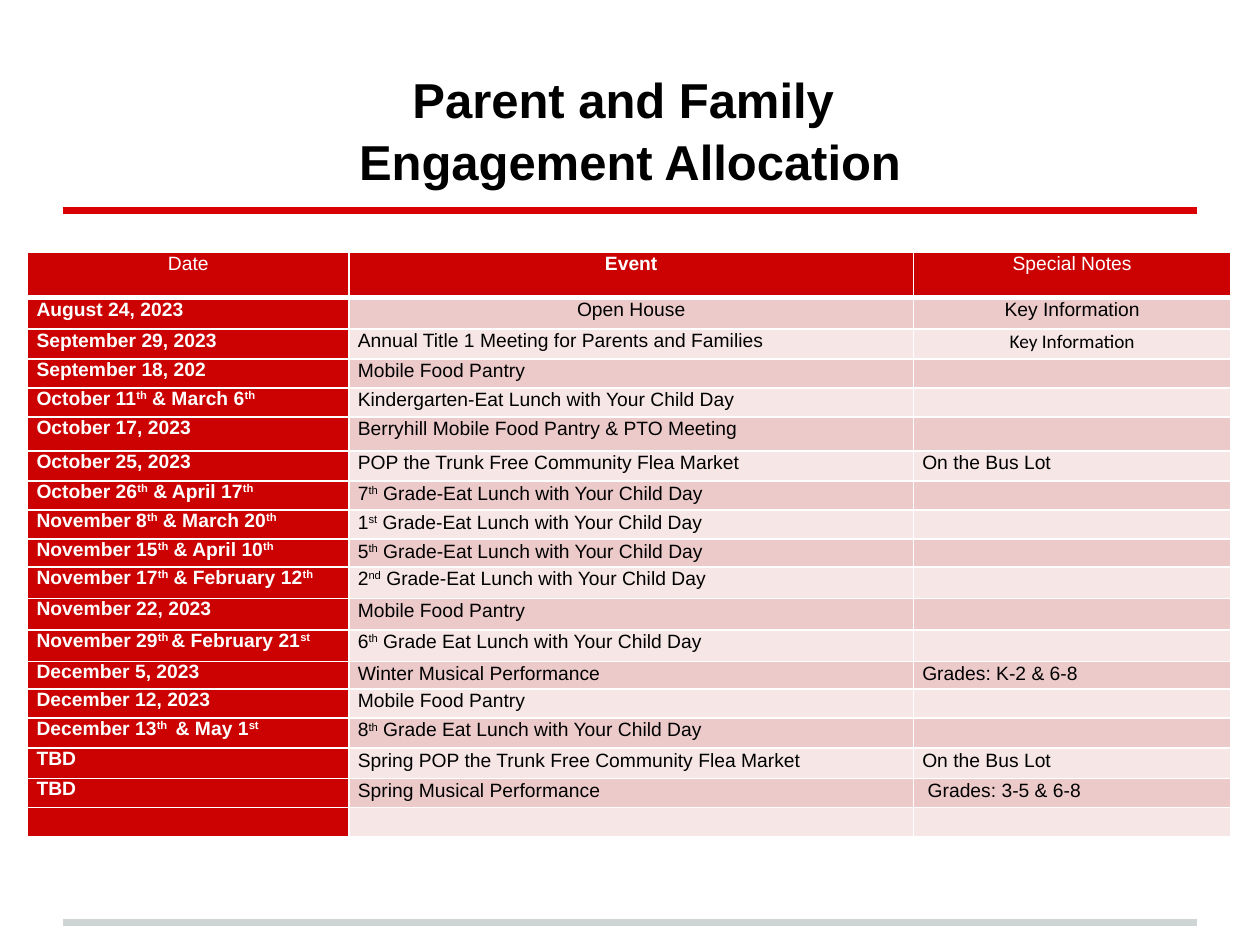
from dataclasses import dataclass
from typing import NamedTuple

from lxml import etree
from pptx import Presentation
from pptx import util as u
from pptx.dml.color import RGBColor
from pptx.enum import shapes, text
from pptx.oxml.ns import qn


@dataclass(frozen=True)
class Theme:
    font: str = "Arial"
    alt_font: str = "Calibri"
    title_size: float = 28
    body_size: float = 11
    ink: str = "000000"
    paper: str = "FFFFFF"
    red: str = "CC0202"
    rule_red: str = "DA0002"
    rule_grey: str = "CFD4D4"
    bands: tuple = ("ECCACA", "F6E6E6")


class Event(NamedTuple):
    """One table row; text between carets is superscript."""
    height: float
    date: str
    event: str = ""
    notes: str = ""


T = Theme()
WIDTH, HEIGHT = 10, 7.5
MARGIN = 0.05 * WIDTH
TABLE_LEFT, TABLE_TOP = 0.22, 2
COLUMNS = (2.55, 4.48, 2.52)
HEADER_HEIGHT = 0.36
HEADERS = ("Date", "Event", "Special Notes")
LUNCH = "Grade-Eat Lunch with Your Child Day"
PANTRY = "Mobile Food Pantry"
EVENTS = [
    Event(0.25, "August 24, 2023", "Open House", "Key Information"),
    Event(0.24, "September 29, 2023",
          "Annual Title 1 Meeting for Parents and Families", "Key Information"),
    Event(0.23, "September 18, 202", PANTRY),
    Event(0.23, "October 11^th^ & March 6^th^", "Kindergarten-Eat Lunch with Your Child Day"),
    Event(0.27, "October 17, 2023", "Berryhill Mobile Food Pantry & PTO Meeting"),
    Event(0.24, "October 25, 2023", "POP the Trunk Free Community Flea Market",
          "On the Bus Lot"),
    Event(0.23, "October 26^th^ & April 17^th^", f"7^th^ {LUNCH}"),
    Event(0.23, "November 8^th^ & March 20^th^", f"1^st^ {LUNCH}"),
    Event(0.22, "November 15^th^ & April 10^th^", f"5^th^ {LUNCH}"),
    Event(0.25, "November 17^th^ & February 12^th^", f"2^nd^ {LUNCH}"),
    Event(0.25, "November 22, 2023", PANTRY),
    Event(0.25, "November 29^th ^& February 21^st^", "6^th^ Grade Eat Lunch with Your Child Day"),
    Event(0.22, "December 5, 2023", "Winter Musical Performance", "Grades: K-2 & 6-8"),
    Event(0.23, "December 12, 2023", PANTRY),
    Event(0.24, "December 13^th ^ & May 1^st^", "8^th^ Grade Eat Lunch with Your Child Day"),
    Event(0.24, "TBD", "Spring POP the Trunk Free Community Flea Market", "On the Bus Lot"),
    Event(0.23, "TBD", "Spring Musical Performance", " Grades: 3-5 & 6-8"),
    Event(0.23, ""),
]


def apply(target, values: dict) -> None:
    for name, value in values.items():
        setattr(target, name, value)


def set_font(font, size: float, color: str, bold: bool, name: str = T.font) -> None:
    apply(font, {"name": name, "size": u.Pt(size), "bold": bold})
    font.color.rgb = RGBColor.from_string(color)


def add_rule(slide, y: float, color: str) -> None:
    line = slide.shapes.add_connector(
        shapes.MSO_CONNECTOR.STRAIGHT,
        *(u.Inches(v) for v in (MARGIN, y, WIDTH - MARGIN, y)))
    line.line.color.rgb = RGBColor.from_string(color)
    line.line.width = u.Pt(4)
    etree.SubElement(line._element.spPr, qn("a:effectLst"))


def set_title(slide, lines: tuple) -> None:
    sp = slide.shapes.title
    apply(sp, {"left": u.Inches(MARGIN), "top": u.Inches(0.48),
               "width": u.Inches(WIDTH - 2 * MARGIN), "height": u.Inches(1.25)})
    tf = sp.text_frame
    apply(tf, {"text": "\n".join(lines), "word_wrap": True,
               "auto_size": text.MSO_AUTO_SIZE.NONE,
               "vertical_anchor": text.MSO_ANCHOR.TOP})
    for p in tf.paragraphs:
        apply(p, {"alignment": text.PP_ALIGN.CENTER, "line_spacing": 1.05})
        set_font(p.runs[0].font, T.title_size, T.ink, True)


def set_borders(cell, **widths: float) -> None:
    """Draw the four cell sides; they must precede the fill."""
    props = cell._tc.get_or_add_tcPr()
    for i, side in enumerate("LRTB"):
        ln = etree.Element(qn(f"a:ln{side}"), w=str(u.Pt(widths.get(side, 1))))
        fill = etree.SubElement(ln, qn("a:solidFill"))
        etree.SubElement(fill, qn("a:srgbClr"), val=T.paper)
        props.insert(i, ln)


def fill_cell(cell, words: str, fill: str, color: str, bold: bool,
              centered: bool, spacing: float, font: str = T.font) -> None:
    apply(cell, {"margin_left": u.Inches(0.07), "margin_right": u.Inches(0.07),
                 "margin_top": 0, "margin_bottom": 0})
    cell.fill.solid()
    cell.fill.fore_color.rgb = RGBColor.from_string(fill)
    p = cell.text_frame.paragraphs[0]
    apply(p, {"line_spacing": spacing,
              "alignment": text.PP_ALIGN.CENTER if centered else text.PP_ALIGN.LEFT})
    for i, part in enumerate(words.split("^")):
        if part:
            r = p.add_run()
            r.text = part
            set_font(r.font, T.body_size, color, bold, font)
            if i % 2:
                r.font._element.set("baseline", "30000")
    if not words:  # keeps empty rows from growing
        etree.SubElement(p._p, qn("a:endParaRPr"), sz=str(int(T.body_size * 100)))


def add_schedule(slide) -> None:
    heights = [HEADER_HEIGHT] + [e.height for e in EVENTS]
    table = slide.shapes.add_table(
        len(heights), len(COLUMNS), u.Inches(TABLE_LEFT), u.Inches(TABLE_TOP),
        u.Inches(sum(COLUMNS)), u.Inches(sum(heights))).table
    for column, width in zip(table.columns, COLUMNS):
        column.width = u.Inches(width)
    for row, height in zip(table.rows, heights):
        row.height = u.Inches(height)

    # Header row
    for c, words in enumerate(HEADERS):
        cell = table.cell(0, c)
        fill_cell(cell, words, T.red, T.paper, words == "Event", True, 1.07)
        set_borders(cell, B=3)

    # Event rows: red dates, banded details
    for n, event in enumerate(EVENTS, start=1):
        for c, words in enumerate((event.date, event.event, event.notes)):
            cell, is_date = table.cell(n, c), c == 0
            fill_cell(cell, words,
                      fill=T.red if is_date else T.bands[(n - 1) % 2],
                      color=T.paper if is_date else T.ink,
                      bold=is_date,
                      centered=words in ("Open House", "Key Information"),
                      spacing=1 if is_date and n > 2 else 1.07,
                      font=T.alt_font if (n, c) == (2, 2) else T.font)
            set_borders(cell, T=3 if n == 1 else 1)


def main() -> None:
    prs = Presentation()
    apply(prs, {"slide_width": u.Inches(WIDTH), "slide_height": u.Inches(HEIGHT)})
    s = prs.slides.add_slide(prs.slide_layouts[5])
    add_rule(s, 7.32, T.rule_grey)
    add_rule(s, 1.67, T.rule_red)
    set_title(s, ("Parent and Family ", "Engagement Allocation"))
    add_schedule(s)
    prs.save("out.pptx")


if __name__ == "__main__":
    main()
